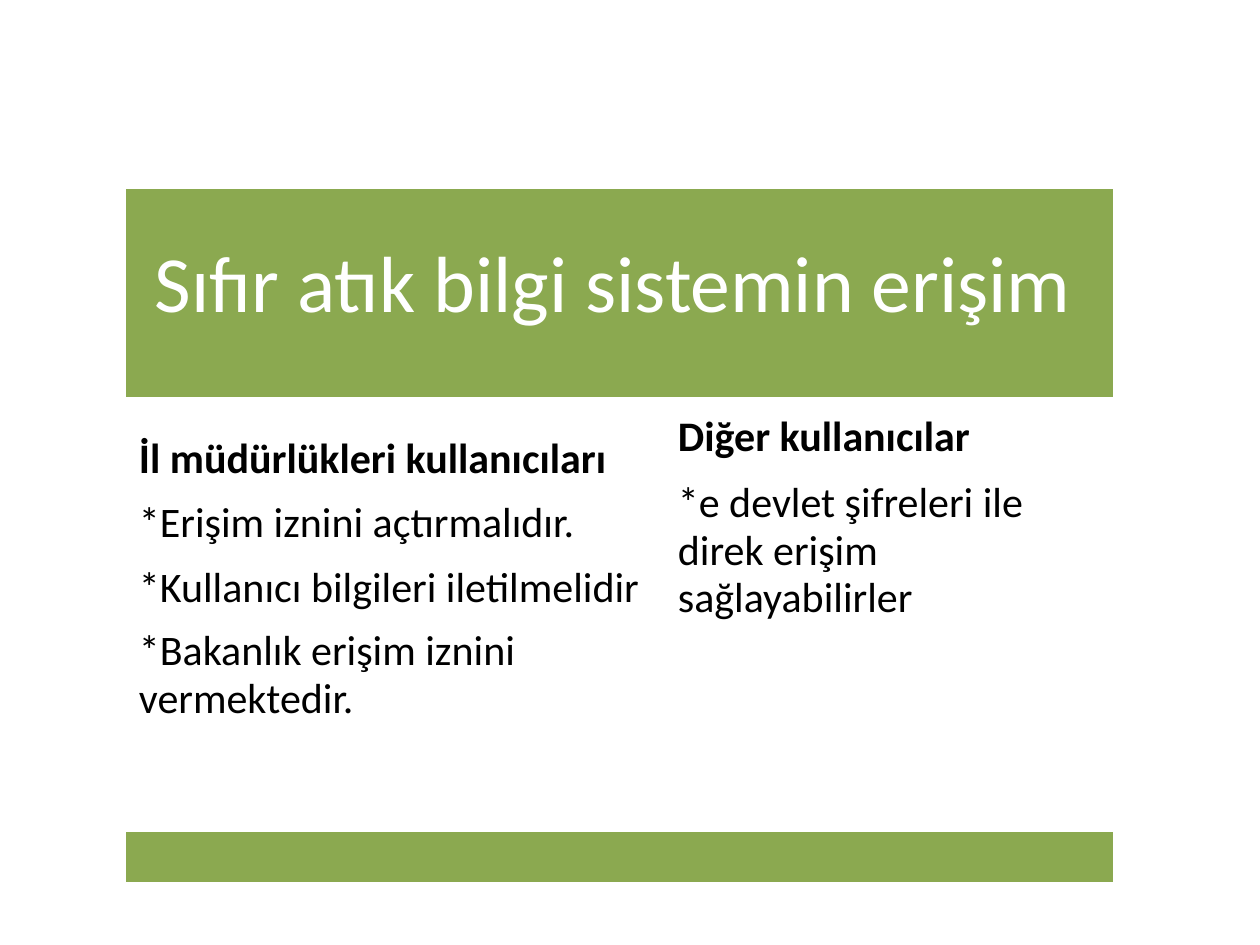
from pptx import Presentation
from pptx.dml.color import RGBColor
from pptx.util import Emu, Pt

PX = 914400 // 126
GREEN = RGBColor(0x8B, 0xA9, 0x50)
WHITE = RGBColor(0xFF, 0xFF, 0xFF)
BLACK = RGBColor(0, 0, 0)
NO_STYLE_NO_GRID = "{2D5ABB26-0587-4C30-8999-92F81FD0307C}"

LEFT, TOP = 126, 189
COL_WIDTHS = [538, 449]
ROW_HEIGHTS = [208, 435, 50]

TITLE = "Sıfır atık bilgi sistemin erişim"
# Each paragraph: text, format
PROVINCE_USERS = [
    ("İl müdürlükleri kullanıcıları", dict(bold=True)),
    ("*Erişim iznini açtırmalıdır.", dict(before=7.2)),
    ("*Kullanıcı bilgileri iletilmelidir", dict(before=8)),
    ("*Bakanlık erişim iznini vermektedir.", dict(before=8.1, line=Pt(27.6))),
]
OTHER_USERS = [
    ("Diğer kullanıcılar", dict(bold=True)),
    ("*e devlet şifreleri ile direk erişim\vsağlayabilirler",
     dict(before=9.3, line=0.93)),
]


def px(n):
    return Emu(n * PX)


def write(p, text, size=24, color=BLACK, bold=False, before=0, line=None):
    p.text = text
    p.space_before = Pt(before)
    if line:
        p.line_spacing = line
    for r in p.runs:
        r.font.name = "Calibri"
        r.font.size = Pt(size)
        r.font.bold = bold
        r.font.color.rgb = color


def fill_cell(cell, paragraphs, left=0, top=0, fill=None):
    cell.margin_left, cell.margin_top = px(left), px(top)
    cell.margin_right = cell.margin_bottom = 0
    if fill is None:
        cell.fill.background()
    else:
        cell.fill.solid()
        cell.fill.fore_color.rgb = fill
    tf = cell.text_frame
    for i, (text, fmt) in enumerate(paragraphs):
        write(tf.add_paragraph() if i else tf.paragraphs[0], text, **fmt)


prs = Presentation()
prs.slide_width, prs.slide_height = px(1260), px(945)
s = prs.slides.add_slide(prs.slide_layouts[6])

frame = s.shapes.add_table(len(ROW_HEIGHTS), len(COL_WIDTHS), px(LEFT), px(TOP),
                           px(sum(COL_WIDTHS)), px(sum(ROW_HEIGHTS)))
table = frame.table
table.first_row = table.horz_banding = False
table._tbl.tblPr.find("{*}tableStyleId").text = NO_STYLE_NO_GRID
for column, width in zip(table.columns, COL_WIDTHS):
    column.width = px(width)
for row, height in zip(table.rows, ROW_HEIGHTS):
    row.height = px(height)
for band in (0, 2):
    table.cell(band, 0).merge(table.cell(band, 1))

fill_cell(table.cell(0, 0), [(TITLE, dict(size=45.5, color=WHITE))],
          left=29, top=48, fill=GREEN)
fill_cell(table.cell(1, 0), PROVINCE_USERS, left=13, top=37)
fill_cell(table.cell(1, 1), OTHER_USERS, left=14, top=15)
fill_cell(table.cell(2, 0), [], fill=GREEN)

prs.save("out.pptx")
